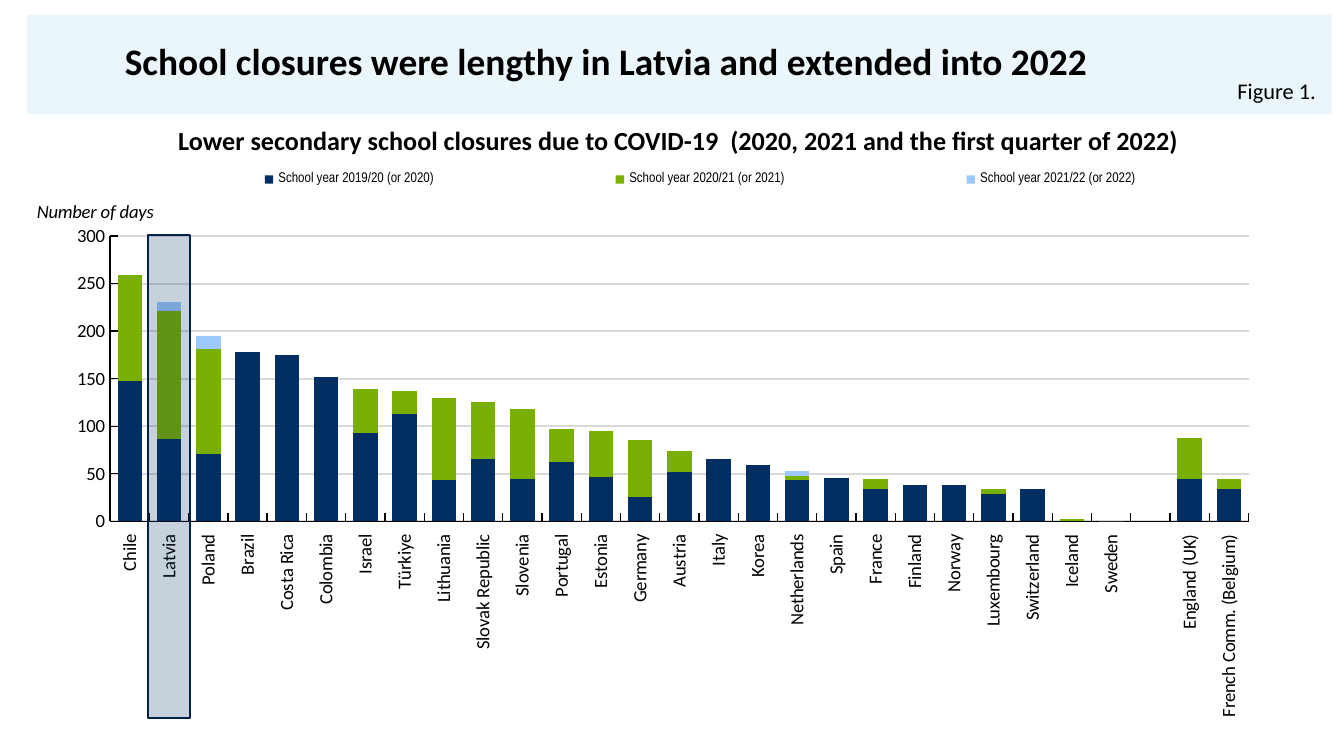
from lxml import etree
from pptx import Presentation
from pptx.chart.data import CategoryChartData
from pptx.dml.color import RGBColor
from pptx.enum.chart import XL_CHART_TYPE, XL_LEGEND_POSITION, XL_TICK_LABEL_POSITION, XL_TICK_MARK
from pptx.enum.shapes import MSO_SHAPE
from pptx.enum.text import MSO_ANCHOR, PP_ALIGN
from pptx.oxml.ns import qn
from pptx.util import Pt

STACKED = XL_CHART_TYPE.COLUMN_STACKED
BOTTOM = XL_LEGEND_POSITION.BOTTOM
LOW = XL_TICK_LABEL_POSITION.LOW
INSIDE, NO_TICK = XL_TICK_MARK.INSIDE, XL_TICK_MARK.NONE
RECTANGLE = MSO_SHAPE.RECTANGLE
TOP, MIDDLE = MSO_ANCHOR.TOP, MSO_ANCHOR.MIDDLE
LEFT, CENTER, RIGHT = PP_ALIGN.LEFT, PP_ALIGN.CENTER, PP_ALIGN.RIGHT

COLORS = {
    "band": "6FC5D5", "text": "000000", "axis": "000101", "grid": "D9D9D9",
    "first_year": "032E61", "second_year": "79AF02", "third_year": "9CC8FC",
    "highlight": "032E61", "highlight_edge": "022248",
}

# Days closed per country: 2019/20, 2020/21, 2021/22
CLOSURES = [
    ("Chile", 147, 112, 0), ("Latvia", 86, 135, 10), ("Poland", 71, 110, 14),
    ("Brazil", 178, 0, 0), ("Costa Rica", 175, 0, 0), ("Colombia", 152, 0, 0),
    ("Israel", 93, 46, 0), ("Türkiye", 113, 24, 0), ("Lithuania", 43, 87, 0),
    ("Slovak Republic", 65, 60, 0), ("Slovenia", 44, 74, 0), ("Portugal", 62, 35, 0),
    ("Estonia", 46, 49, 0), ("Germany", 25, 60, 0), ("Austria", 52, 22, 0),
    ("Italy", 65, 0, 0), ("Korea", 59, 0, 0), ("Netherlands", 43, 5, 5),
    ("Spain", 45, 0, 0), ("France", 34, 10, 0), ("Finland", 38, 0, 0),
    ("Norway", 38, 0, 0), ("Luxembourg", 29, 5, 0), ("Switzerland", 34, 0, 0),
    ("Iceland", 0, 2, 0), ("Sweden", 0, 0, 0), ("", None, None, None),
    ("England (UK)", 44, 44, 0), ("French Comm. (Belgium)", 34, 10, 0),
]
SCHOOL_YEARS = [
    ("School year 2019/20 (or 2020)", "first_year"),
    ("School year 2020/21 (or 2021)", "second_year"),
    ("School year 2021/22 (or 2022)", "third_year"),
]


def color(name):
    return RGBColor.from_string(COLORS[name])


def style_font(font, size, color_name="text", face="Calibri", bold=False, italic=False):
    font.size, font.name, font.bold, font.italic = Pt(size), face, bold, italic
    font.color.rgb = color(color_name)


def add_text(slide, box, text, size, bold=False, align=LEFT, anchor=TOP):
    frame = slide.shapes.add_textbox(*map(Pt, box)).text_frame
    frame.word_wrap = True
    frame.vertical_anchor = anchor
    paragraph = frame.paragraphs[0]
    paragraph.alignment = align
    paragraph.line_spacing = 0.9
    run = paragraph.add_run()
    run.text = text
    style_font(run.font, size, bold=bold)


def add_tint(slide, box, fill, opacity, edge=None):
    """Add a translucent rectangle; opacity is in percent."""
    tint = slide.shapes.add_shape(RECTANGLE, *map(Pt, box))
    tint.shadow.inherit = False
    tint.fill.solid()
    tint.fill.fore_color.rgb = color(fill)
    srgb = tint.fill._xPr.find(".//" + qn("a:srgbClr"))
    etree.SubElement(srgb, qn("a:alpha"), val=str(opacity * 1000))
    if edge:
        tint.line.color.rgb = color(edge)
        tint.line.width = Pt(1)
    else:
        tint.line.fill.background()


def place(element, x, y, w=None, h=None, inner=False):
    """Give a chart part a manual layout, in fractions of the chart."""
    for old in element.findall(qn("c:layout")):
        element.remove(old)
    layout = etree.Element(qn("c:layout"))
    manual = etree.SubElement(layout, qn("c:manualLayout"))
    settings = [("layoutTarget", "inner" if inner else None),
                ("xMode", "edge"), ("yMode", "edge"),
                ("x", x), ("y", y), ("w", w), ("h", h)]
    for tag, value in settings:
        if value is not None:
            etree.SubElement(manual, qn("c:" + tag), val=str(value))
    overlay = element.find(qn("c:overlay"))
    if overlay is None:
        element.insert(0, layout)
    else:
        overlay.addprevious(layout)


def style_axis(axis):
    axis.major_tick_mark, axis.minor_tick_mark = INSIDE, NO_TICK
    axis.format.line.color.rgb = color("axis")
    axis.format.line.width = Pt(0.75)
    style_font(axis.tick_labels.font, 10, "axis")


def style_country_axis(axis):
    style_axis(axis)
    axis.tick_label_position = LOW
    axis.has_major_gridlines = False
    axis._element.find(qn("c:txPr")).find(qn("a:bodyPr")).set("rot", "-5400000")


def style_days_axis(axis):
    style_axis(axis)
    axis.minimum_scale, axis.maximum_scale, axis.major_unit = 0, 300, 50
    axis.tick_labels.number_format = "General"
    axis.tick_labels.number_format_is_linked = False
    axis.has_major_gridlines = True
    axis.major_gridlines.format.line.color.rgb = color("grid")
    axis.major_gridlines.format.line.width = Pt(1)
    # Horizontal title above the axis
    frame = axis.axis_title.text_frame
    run = frame.paragraphs[0].add_run()
    run.text = "Number of days"
    style_font(run.font, 10, "axis", italic=True)
    body = frame._txBody.find(qn("a:bodyPr"))
    body.set("rot", "0")
    body.set("vert", "horz")
    place(axis.axis_title._element, 0.004, 0.07)


def add_closures_chart(slide, box):
    countries, *days_by_year = zip(*CLOSURES)
    data = CategoryChartData()
    data.categories = countries
    for (year, _), days in zip(SCHOOL_YEARS, days_by_year):
        data.add_series(year, days)
    chart = slide.shapes.add_chart(STACKED, *map(Pt, box), data).chart
    chart.has_title = False
    style_font(chart.font, 10)

    # Columns
    plot = chart.plots[0]
    plot.gap_width, plot.overlap, plot.vary_by_categories = 60, 100, False
    for series, (_, fill) in zip(plot.series, SCHOOL_YEARS):
        series.invert_if_negative = False
        series.format.fill.solid()
        series.format.fill.fore_color.rgb = color(fill)
    place(chart._chartSpace.chart.plotArea, 0.063, 0.141, 0.875, 0.509, inner=True)

    style_country_axis(chart.category_axis)
    style_days_axis(chart.value_axis)

    # Legend above the columns
    chart.has_legend = True
    legend = chart.legend
    legend.position = BOTTOM
    legend.include_in_layout = True
    style_font(legend.font, 7.5, face="Arial Narrow")
    place(legend._element, 0.045, 0.01, 0.943, 0.06)


def main():
    deck = Presentation()
    deck.slide_width, deck.slide_height = Pt(720), Pt(405)
    slide = deck.slides.add_slide(deck.slide_layouts[6])

    # Heading band
    add_tint(slide, (14.4, 7.9, 699, 53.3), "band", 14)
    add_text(slide, (59.8, 12.2, 565, 44), bold=True, size=20, anchor=MIDDLE,
             text="School closures were lengthy in Latvia and extended into 2022")
    add_text(slide, (625, 39.6, 87, 16.6), "Figure 1.", 12, align=RIGHT)

    # Chart with its heading
    add_text(slide, (15.1, 64.8, 697, 22.3), bold=True, size=14, align=CENTER,
             text="Lower secondary school closures due to COVID-19  "
                  "(2020, 2021 and the first quarter of 2022)")
    add_closures_chart(slide, (15.1, 84.2, 697, 300.2))

    # Latvia highlight
    add_tint(slide, (79.2, 126, 22.5, 258.5), "highlight", 22, "highlight_edge")

    deck.save("out.pptx")


if __name__ == "__main__":
    main()
